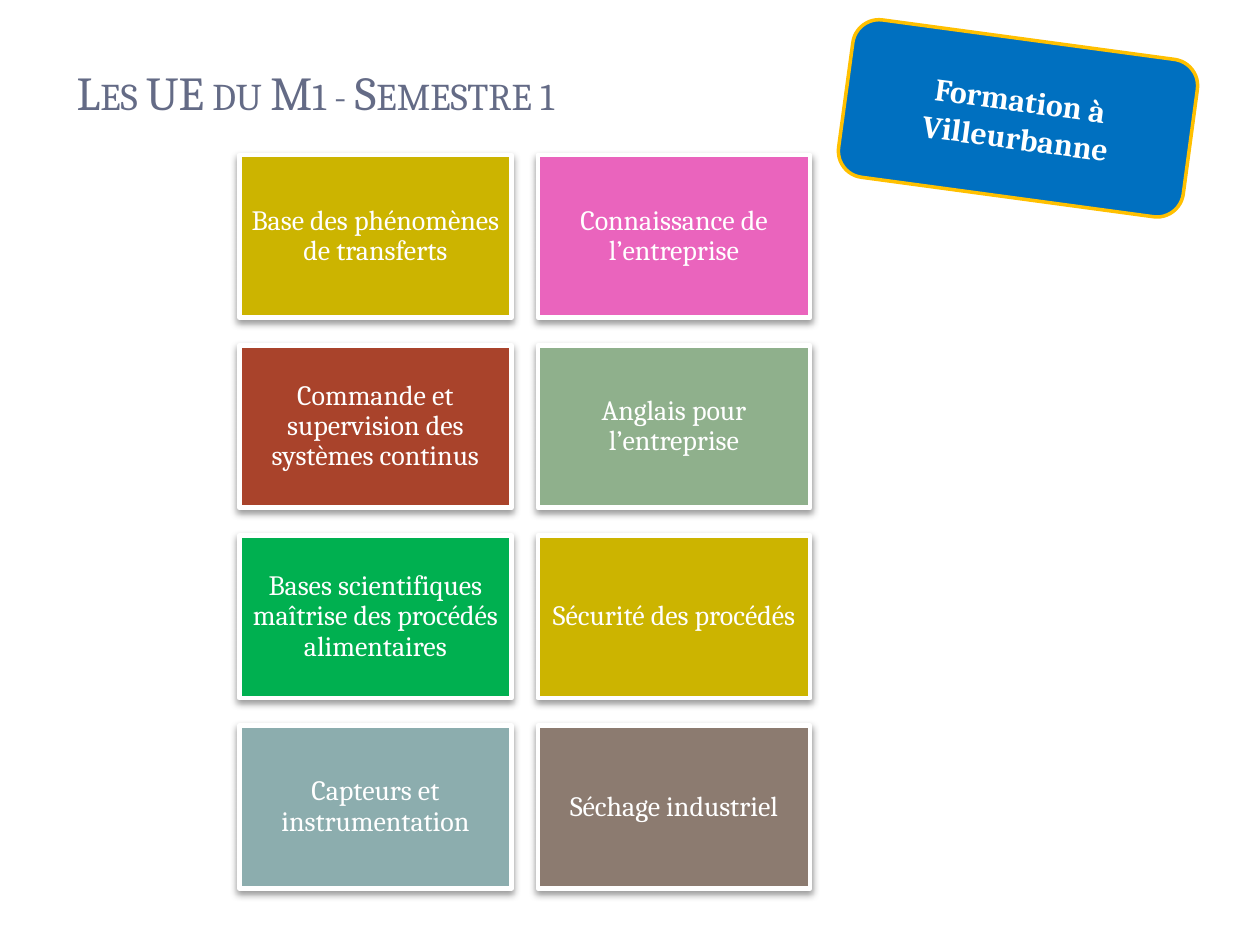
from dataclasses import dataclass

from lxml.etree import SubElement
from pptx import Presentation
from pptx.dml.color import RGBColor
from pptx.enum.shapes import MSO_SHAPE
from pptx.enum.text import MSO_ANCHOR, PP_ALIGN
from pptx.oxml.ns import qn
from pptx.util import Emu, Inches, Pt

FONT = "Cambria"
WHITE = RGBColor(0xFF, 0xFF, 0xFF)
SLATE = RGBColor(0x64, 0x6B, 0x86)
MUSTARD = RGBColor(0xCC, 0xB4, 0x00)
PINK = RGBColor(0xEA, 0x64, 0xBD)
BRICK = RGBColor(0xA9, 0x43, 0x2B)
SAGE = RGBColor(0x8F, 0xB0, 0x8C)
GREEN = RGBColor(0x00, 0xB0, 0x50)
TEAL = RGBColor(0x8C, 0xAD, 0xAE)
TAUPE = RGBColor(0x8C, 0x7B, 0x70)
BLUE = RGBColor(0x00, 0x70, 0xC0)
AMBER = RGBColor(0xFF, 0xC0, 0x00)


@dataclass(frozen=True)
class Grid:
    left: float
    top: float
    width: float
    height: float
    column_step: float
    row_step: float
    columns: int

    def cell(self, index: int) -> tuple[Emu, Emu, Emu, Emu]:
        row, column = divmod(index, self.columns)
        return (
            Inches(self.left + column * self.column_step),
            Inches(self.top + row * self.row_step),
            Inches(self.width),
            Inches(self.height),
        )


@dataclass(frozen=True)
class Unit:
    name: str
    color: RGBColor


UNIT_GRID = Grid(1.9, 1.23, 2.16, 1.29, 2.37, 1.51, 2)
UNITS = [
    Unit("Base des phénomènes de transferts", MUSTARD),
    Unit("Connaissance de l’entreprise", PINK),
    Unit("Commande et supervision des systèmes continus", BRICK),
    Unit("Anglais pour l’entreprise", SAGE),
    Unit("Bases scientifiques maîtrise des procédés alimentaires", GREEN),
    Unit("Sécurité des procédés", MUSTARD),
    Unit("Capteurs et instrumentation", TEAL),
    Unit("Séchage industriel", TAUPE),
]


def add_run(paragraph, wording: str, size: float, color: RGBColor, bold: bool = False):
    run = paragraph.add_run()
    run.text = wording
    run.font.name = FONT
    run.font.size = Pt(size)
    run.font.color.rgb = color
    run.font.bold = bold
    return run


def add_panel(slide, preset: MSO_SHAPE, box: tuple, fill: RGBColor, border: RGBColor, weight: float):
    panel = slide.shapes.add_shape(preset, *box)
    panel.shadow.inherit = False
    panel.fill.solid()
    panel.fill.fore_color.rgb = fill
    panel.line.color.rgb = border
    panel.line.width = Pt(weight)
    panel.text_frame.word_wrap = True
    panel.text_frame.vertical_anchor = MSO_ANCHOR.MIDDLE
    return panel


def cast_shadow(panel) -> None:
    effects = panel.element.spPr.find(qn("a:effectLst"))
    shadow = SubElement(
        effects, qn("a:outerShdw"),
        blurRad=str(Pt(4)), dist=str(Pt(2)), dir="5400000", rotWithShape="0",
    )
    black = SubElement(shadow, qn("a:srgbClr"), val="000000")
    SubElement(black, qn("a:alpha"), val="40000")


def add_title(slide, wording: str) -> None:
    title = slide.shapes.add_textbox(Inches(0.51), Inches(0.44), Inches(8.17), Inches(0.56))
    title.text_frame.word_wrap = True
    title.text_frame.vertical_anchor = MSO_ANCHOR.BOTTOM
    run = add_run(title.text_frame.paragraphs[0], wording, 27, SLATE)
    run.font._element.set("cap", "small")


def add_unit(slide, unit: Unit, box: tuple) -> None:
    tile = add_panel(slide, MSO_SHAPE.RECTANGLE, box, unit.color, WHITE, 2.75)
    cast_shadow(tile)
    frame = tile.text_frame
    frame.margin_left = frame.margin_right = Inches(0.07)
    frame.margin_top = frame.margin_bottom = Inches(0.07)
    paragraph = frame.paragraphs[0]
    paragraph.alignment = PP_ALIGN.CENTER
    paragraph.line_spacing = 0.9
    paragraph.space_after = Pt(5.6)
    add_run(paragraph, unit.name, 16, WHITE)


def add_badge(slide, lines: list[str]) -> None:
    box = (Inches(6.7), Inches(0.31), Inches(2.76), Inches(1.26))
    badge = add_panel(slide, MSO_SHAPE.ROUNDED_RECTANGLE, box, BLUE, AMBER, 2)
    badge.rotation = 7.7
    frame = badge.text_frame
    for index, line in enumerate(lines):
        paragraph = frame.add_paragraph() if index else frame.paragraphs[0]
        paragraph.alignment = PP_ALIGN.CENTER
        add_run(paragraph, line, 18, WHITE, bold=True)


def main() -> None:
    presentation = Presentation()
    presentation.slide_width = Inches(10)
    presentation.slide_height = Inches(7.5)
    slide = presentation.slides.add_slide(presentation.slide_layouts[6])
    add_title(slide, "Les UE du M1 - Semestre 1")
    for index, unit in enumerate(UNITS):
        add_unit(slide, unit, UNIT_GRID.cell(index))
    add_badge(slide, ["Formation à", "Villeurbanne"])
    presentation.save("out.pptx")


if __name__ == "__main__":
    main()
